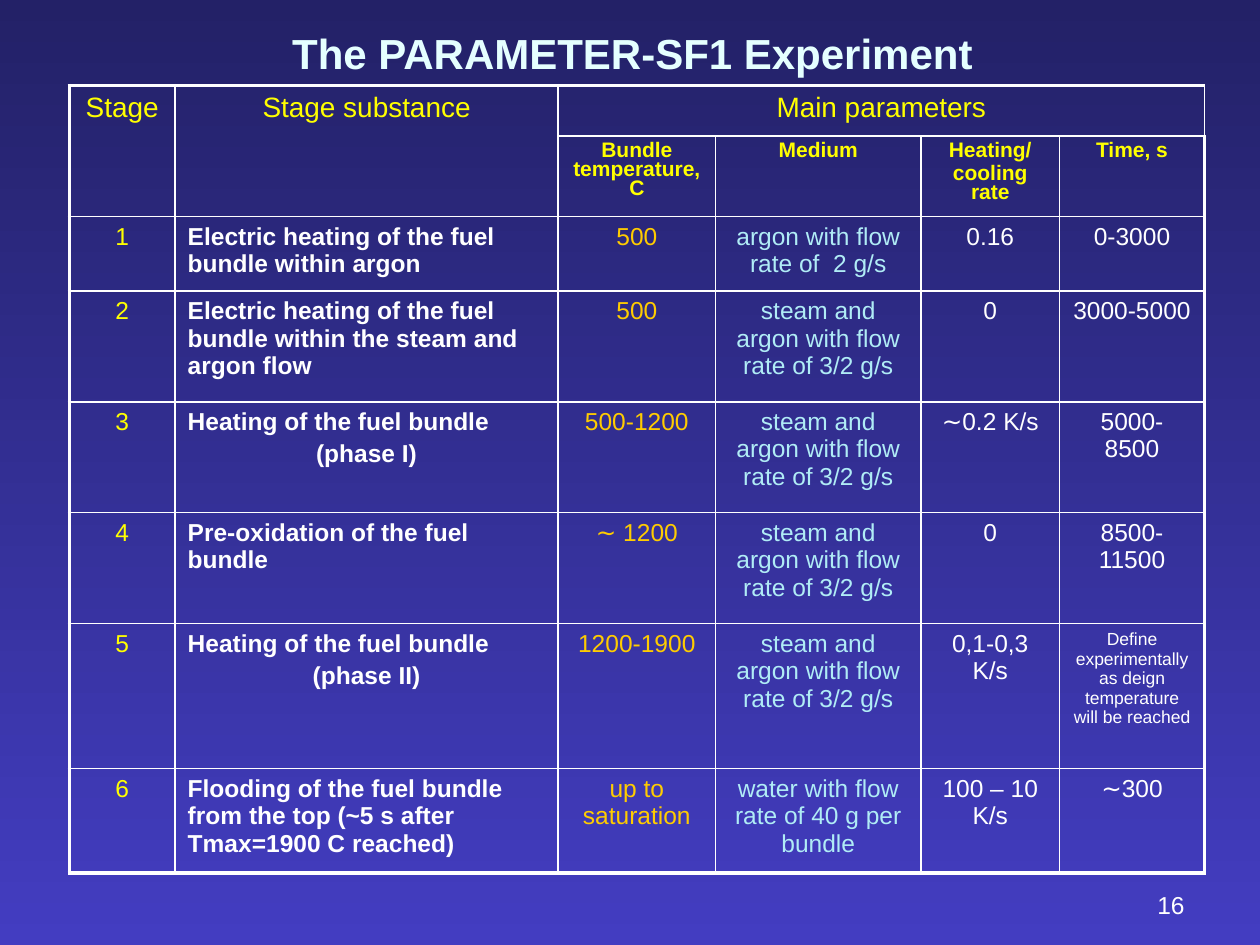
from lxml.etree import SubElement
from pptx import Presentation
from pptx.dml.color import RGBColor
from pptx.enum.text import MSO_ANCHOR, PP_ALIGN
from pptx.oxml.ns import qn
from pptx.util import Inches, Pt

WHITE, YELLOW, ORANGE, CYAN = "FFFFFF", "FFFF00", "FFCC00", "B0ECF6"
COLUMN_WIDTHS = [0.84, 3.04, 1.25, 1.63, 1.1, 1.15]
ROW_HEIGHTS = [0.4, 0.64, 0.59, 0.88, 0.88, 0.88, 1.15, 0.83]
COLUMN_COLORS = [YELLOW, WHITE, ORANGE, CYAN, WHITE, WHITE]
STEAM = "steam and argon with flow rate of 3/2 g/s"
HEADINGS = ["Stage", "Stage substance", "Main parameters"]
PARAMETERS = ["Bundle temperature, С", "Medium", "Heating/\ncooling rate", "Time, s"]
STAGES = [
    ["1", "Electric heating of the fuel bundle within argon", "500",
     "argon with flow rate of  2 g/s", "0.16", "0-3000"],
    ["2", "Electric heating of the fuel bundle within the steam and argon flow", "500",
     STEAM, "0", "3000-5000"],
    ["3", "Heating of the fuel bundle\n(phase I)", "500-1200", STEAM, "∼0.2 K/s", "5000- 8500"],
    ["4", "Pre-oxidation of the fuel bundle", "∼ 1200", STEAM, "0", "8500-11500"],
    ["5", "Heating of the fuel bundle\n(phase II)", "1200-1900", STEAM, "0,1-0,3 K/s",
     "Define experimentally as deign temperature will be reached"],
    ["6", "Flooding of the fuel bundle from the top (~5 s after Tmax=1900 C reached)",
     "up to saturation", "water with flow rate of 40 g per bundle", "100 – 10 K/s", "∼300"],
]


def color(value):
    return RGBColor.from_string(value)


class SlideBuilder:
    font = "Arial"
    thin, thick = 1, 2.25

    def __init__(self, page):
        self.page = page

    def background(self, top, bottom):
        fill = self.page.background.fill
        fill.gradient()
        fill.gradient_angle = 270
        for stop, value in zip(fill.gradient_stops, (top, bottom)):
            stop.color.rgb = color(value)

    def set_text(self, frame, text, size, value, bold=False, align=PP_ALIGN.CENTER):
        frame.text = text
        frame.word_wrap = True
        for para in frame.paragraphs:
            para.alignment = align
            for span in para.runs:
                span.font.name = self.font
                span.font.size = Pt(size)
                span.font.bold = bold
                span.font.color.rgb = color(value)

    def title(self, text, left, top, width, height):
        box = self.page.shapes.title
        box.left, box.top = Inches(left), Inches(top)
        box.width, box.height = Inches(width), Inches(height)
        box.text_frame.vertical_anchor = MSO_ANCHOR.MIDDLE
        self.set_text(box.text_frame, text, 24, "E5FFFF", bold=True)

    def page_number(self, text, left, top, width, height):
        box = self.page.shapes.add_textbox(
            Inches(left), Inches(top), Inches(width), Inches(height))
        box.text_frame.vertical_anchor = MSO_ANCHOR.BOTTOM
        self.set_text(box.text_frame, text, 14, WHITE, align=PP_ALIGN.RIGHT)

    def table(self, left, top):
        rows, columns = len(ROW_HEIGHTS), len(COLUMN_WIDTHS)
        table = self.page.shapes.add_table(
            rows, columns, Inches(left), Inches(top),
            Inches(sum(COLUMN_WIDTHS)), Inches(sum(ROW_HEIGHTS))).table
        table.first_row = table.horz_banding = False
        for column, width in zip(table.columns, COLUMN_WIDTHS):
            column.width = Inches(width)
        for row, height in zip(table.rows, ROW_HEIGHTS):
            row.height = Inches(height)
        for row in range(rows):
            for column in range(columns):
                cell = table.cell(row, column)
                outer = {"L": column == 0, "R": column == columns - 1,
                         "T": row == 0, "B": row == rows - 1}
                for side, is_outer in outer.items():
                    self.border(cell, side, self.thick if is_outer else self.thin)
                cell.fill.background()
        return table

    def border(self, cell, side, width):
        properties = cell._tc.get_or_add_tcPr()
        line = SubElement(properties, qn(f"a:ln{side}"), w=str(Pt(width)))
        fill = SubElement(line, qn("a:solidFill"))
        SubElement(fill, qn("a:srgbClr"), val=WHITE)

    def cell(self, cell, text, size, value, bold=False, align=PP_ALIGN.CENTER, spacing=None):
        self.set_text(cell.text_frame, text, size, value, bold, align)
        for para in cell.text_frame.paragraphs:
            para.space_before = Pt(size * 0.2)
            para.line_spacing = spacing


def main():
    deck = Presentation()
    deck.slide_width, deck.slide_height = Inches(10), Inches(7.5)
    builder = SlideBuilder(deck.slides.add_slide(deck.slide_layouts[5]))
    builder.background("232167", "433DC1")
    builder.page_number("16", 7.17, 6.83, 2.33, 0.52)
    builder.title("The PARAMETER-SF1 Experiment", 0.75, 0.17, 8.54, 0.5)

    table = builder.table(0.55, 0.68)
    for column in (0, 1):
        table.cell(0, column).merge(table.cell(1, column))
    table.cell(0, 2).merge(table.cell(0, 5))
    for column, text in enumerate(HEADINGS):
        builder.cell(table.cell(0, column), text, 16, YELLOW)
    for column, text in enumerate(PARAMETERS, 2):
        builder.cell(table.cell(1, column), text, 12, YELLOW, bold=True, spacing=0.8)
    for row, stage in enumerate(STAGES, 2):
        for column, (text, value) in enumerate(zip(stage, COLUMN_COLORS)):
            substance = column == 1
            size = 10 if text.startswith("Define") else 14
            cell = table.cell(row, column)
            builder.cell(cell, text, size, value, bold=substance,
                         align=PP_ALIGN.LEFT if substance else PP_ALIGN.CENTER)
            for para in cell.text_frame.paragraphs[1:]:
                para.alignment = PP_ALIGN.CENTER
    deck.save("out.pptx")


if __name__ == "__main__":
    main()
